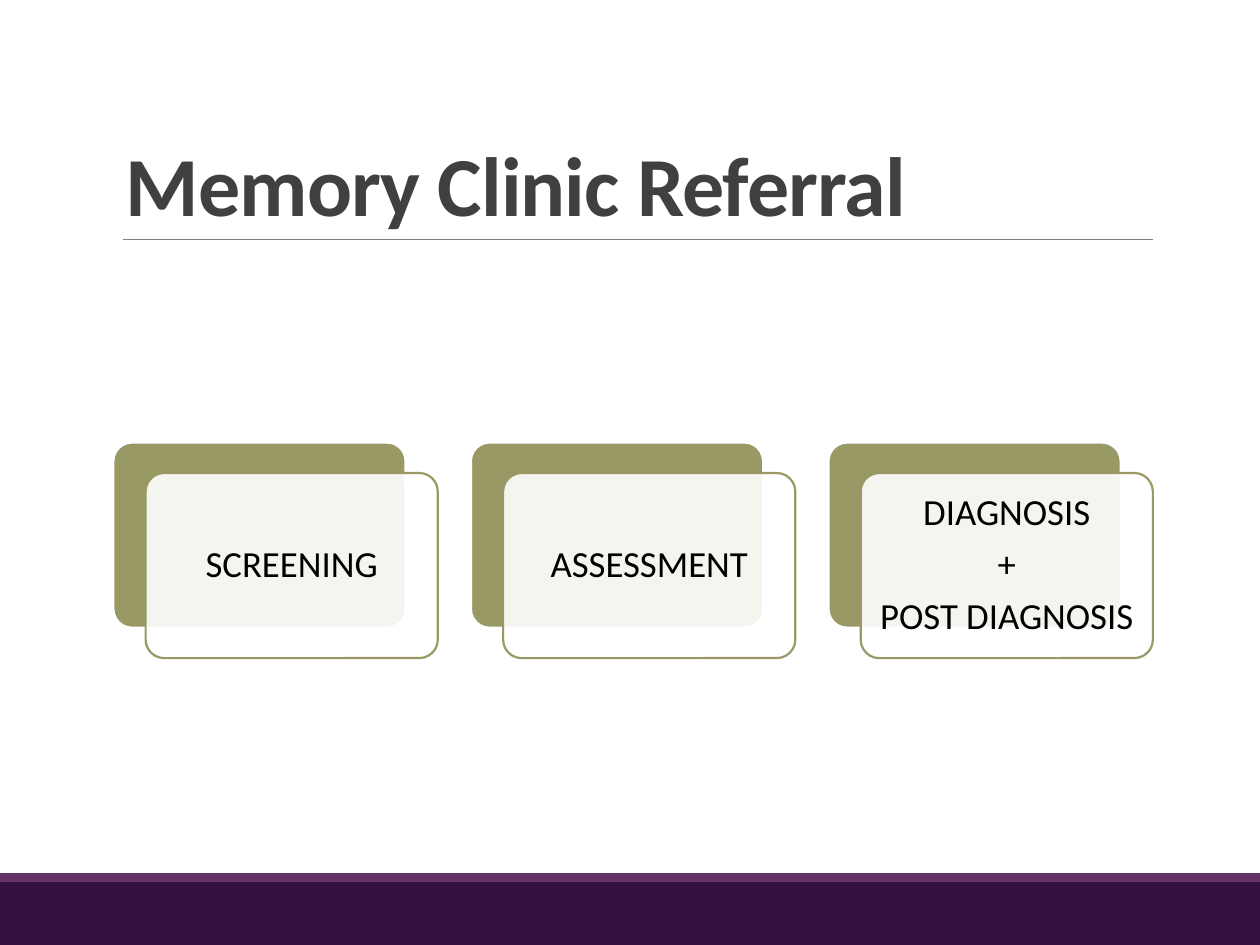
from lxml.etree import SubElement
from pptx import Presentation
from pptx.dml.color import RGBColor
from pptx.enum.shapes import MSO_CONNECTOR as CONN, MSO_SHAPE as SHAPE
from pptx.enum.text import MSO_ANCHOR as ANCHOR, PP_ALIGN as ALIGN
from pptx.oxml.ns import qn
from pptx.util import Pt

TITLE = "Memory Clinic Referral"
STAGES = [
    ["SCREENING"],
    ["ASSESSMENT"],
    ["DIAGNOSIS", "+", "POST DIAGNOSIS"],
]
COLORS = {
    "footer": "330F42",
    "stripe": "663366",
    "rule": "808080",
    "title": "404040",
    "olive": "999966",
    "white": "FFFFFF",
    "text": "000000",
}
FONT = "Calibri"
SLIDE_W, SLIDE_H = 720, 540
FOOTER_TOP, STRIPE_H = 504, 5
LEFT, RIGHT, RULE_Y = 64.8, 658.8, 136.8
CARD_W, CARD_H, CARD_TOP = 167, 105.8, 252.9
SHIFT_X, SHIFT_Y = 18.4, 17.4
PITCH = (RIGHT - LEFT - SHIFT_X - CARD_W) / (len(STAGES) - 1)


def rgb(name):
    return RGBColor.from_string(COLORS[name])


def add_box(kind, x, y, w, h, fill, line=None):
    sp = slide.shapes.add_shape(kind, Pt(x), Pt(y), Pt(w), Pt(h))
    sp.shadow.inherit = False
    sp.fill.solid()
    sp.fill.fore_color.rgb = rgb(fill)
    if line:
        sp.adjustments[0] = 0.1
        sp.line.color.rgb = rgb(line)
        sp.line.width = Pt(1.25)
    else:
        sp.line.fill.background()
    return sp


def set_font(p, size, color, bold=False):
    p.font.name = FONT
    p.font.size = Pt(size)
    p.font.bold = bold
    p.font.color.rgb = rgb(color)


def add_stage(x, lines):
    add_box(SHAPE.ROUNDED_RECTANGLE, x, CARD_TOP, CARD_W, CARD_H, "olive", "white")
    card = add_box(SHAPE.ROUNDED_RECTANGLE, x + SHIFT_X, CARD_TOP + SHIFT_Y,
                   CARD_W, CARD_H, "white", "olive")
    color = card.fill._xPr.find(qn("a:solidFill"))[0]
    SubElement(color, qn("a:alpha"), val="90000")
    tf = card.text_frame
    tf.word_wrap = True
    tf.vertical_anchor = ANCHOR.MIDDLE
    tf.margin_left = tf.margin_right = tf.margin_top = tf.margin_bottom = Pt(7)
    for i, line in enumerate(lines):
        p = tf.add_paragraph() if i else tf.paragraphs[0]
        p.text = line
        p.alignment = ALIGN.CENTER
        p.line_spacing = 0.9
        p.space_after = Pt(7)
        set_font(p, 21, "text")


prs = Presentation()
prs.slide_width, prs.slide_height = Pt(SLIDE_W), Pt(SLIDE_H)
slide = prs.slides.add_slide(prs.slide_layouts[6])

add_box(SHAPE.RECTANGLE, 0, FOOTER_TOP, SLIDE_W, SLIDE_H - FOOTER_TOP, "footer")
add_box(SHAPE.RECTANGLE, 0, FOOTER_TOP - STRIPE_H, SLIDE_W, STRIPE_H, "stripe")

rule = slide.shapes.add_connector(CONN.STRAIGHT, Pt(70.5), Pt(RULE_Y), Pt(RIGHT), Pt(RULE_Y))
rule.line.color.rgb = rgb("rule")
rule.line.width = Pt(0.5)
SubElement(rule._element.spPr, qn("a:effectLst"))

title = slide.shapes.add_textbox(Pt(LEFT), Pt(22.3), Pt(RIGHT - LEFT), Pt(RULE_Y - 22.3))
tf = title.text_frame
tf.word_wrap = True
tf.vertical_anchor = ANCHOR.BOTTOM
p = tf.paragraphs[0]
p.line_spacing = 0.85
r = p.add_run()
r.text = TITLE
r._r.get_or_add_rPr().set("spc", "-50")
set_font(p, 48, "title", bold=True)

for i, lines in enumerate(STAGES):
    add_stage(LEFT + i * PITCH, lines)

prs.save("out.pptx")
